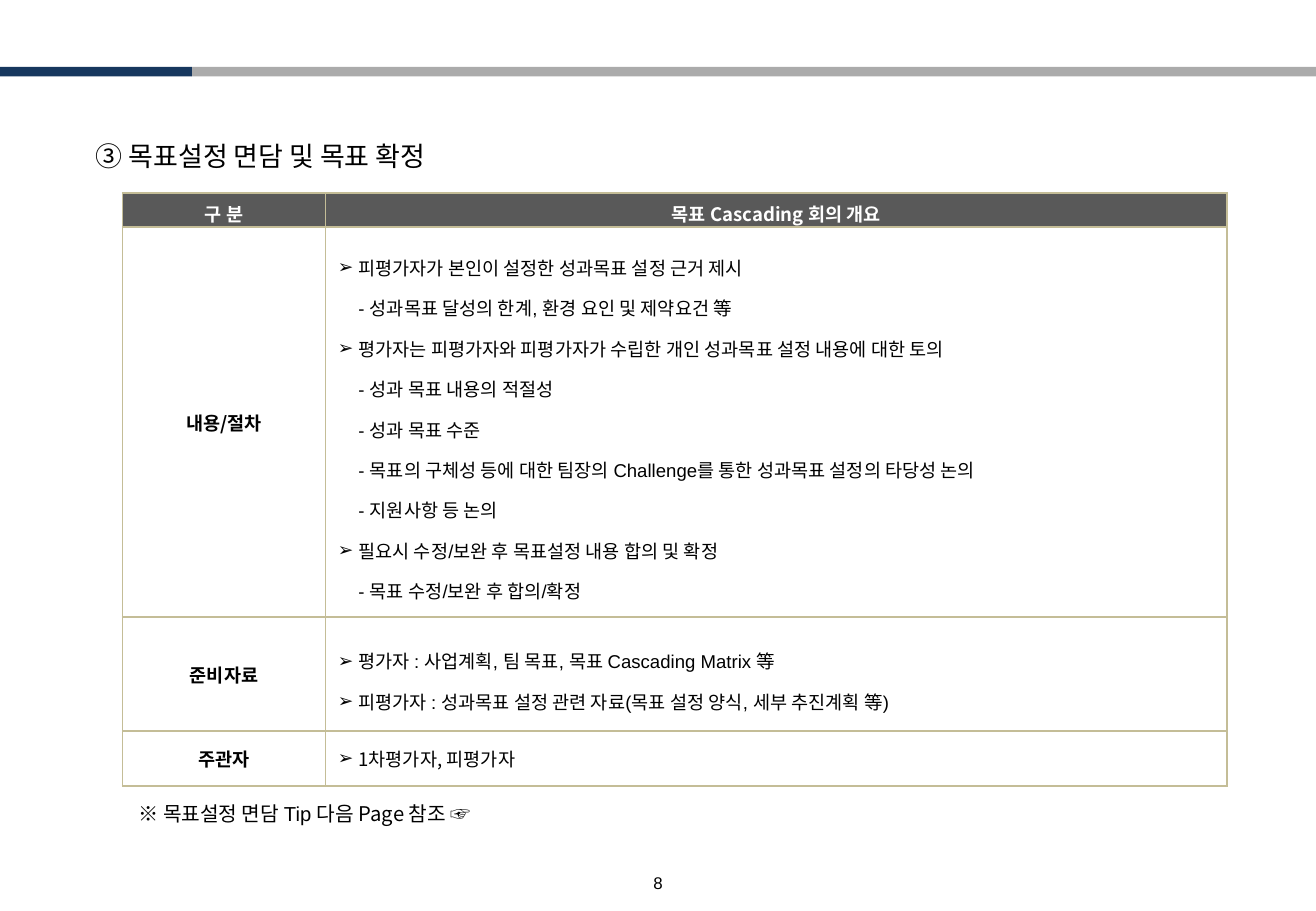
from lxml.etree import SubElement
from pptx import Presentation
from pptx.dml.color import RGBColor
from pptx.enum.shapes import MSO_SHAPE
from pptx.enum.text import MSO_ANCHOR, PP_ALIGN
from pptx.oxml import parse_xml
from pptx.oxml.ns import nsdecls, qn
from pptx.util import Inches, Pt

# Content
TITLE = "③ 목표설정 면담 및 목표 확정"
HEADERS = ("구 분", "목표 Cascading 회의 개요")
BULLET, DASH = "➢", "- "
ROWS = [
    ("내용/절차", "Arial", 1.5, [
        (BULLET, "피평가자가 본인이 설정한 성과목표 설정 근거 제시"),
        (DASH, "성과목표 달성의 한계, 환경 요인 및 제약요건 等"),
        (BULLET, "평가자는 피평가자와 피평가자가 수립한 개인 성과목표 설정 내용에 대한 토의"),
        (DASH, "성과 목표 내용의 적절성"),
        (DASH, "성과 목표 수준"),
        (DASH, "목표의 구체성 등에 대한 팀장의 Challenge를 통한 성과목표 설정의 타당성 논의"),
        (DASH, "지원사항 등 논의"),
        (BULLET, "필요시 수정/보완 후 목표설정 내용 합의 및 확정"),
        (DASH, "목표 수정/보완 후 합의/확정"),
    ]),
    ("준비자료", "Arial", 1.5, [
        (BULLET, "평가자 : 사업계획, 팀 목표, 목표 Cascading Matrix 等"),
        (BULLET, "피평가자 : 성과목표 설정 관련 자료(목표 설정 양식, 세부 추진계획 等)"),
    ]),
    ("주관자", "Noto Sans CJK KR", 1.0, [(BULLET, "1차평가자, 피평가자")]),
]
FOOTNOTE = [("※ 목표설정 면담 Tip 다음 ", "Arial"), ("Page 참조 ☞", "Noto Sans CJK KR")]
PAGE_NUMBER = "8"

# Style and layout
KOREAN = "Noto Sans CJK KR"
COLORS = {"navy": "17375E", "gray": "ABABAB", "header": "595959",
          "border": "C4BD97", "white": "FFFFFF", "black": "000000"}
COLUMN_WIDTHS = (1.67, 7.42)
ROW_HEIGHTS = (0.28, 3.21, 0.94, 0.45)
TABLE_LEFT, TABLE_TOP = 1.01, 1.59
BAR_TOP, BAR_HEIGHT = 0.55, 0.08
HANGING = 0.17


def color(name):
    return RGBColor.from_string(COLORS[name])


def add_span(para, text, size, font=KOREAN, tint="black", bold=False):
    span = para.add_run()
    span.text = text
    span.font.size, span.font.bold, span.font.name = Pt(size), bold, font
    span.font.color.rgb = color(tint)
    SubElement(span._r.get_or_add_rPr(), qn("a:ea")).set("typeface", KOREAN)


def add_text(left, top, width, height, spans, size, align=PP_ALIGN.LEFT):
    box = page.shapes.add_textbox(*map(Inches, (left, top, width, height)))
    box.text_frame.word_wrap = True
    para = box.text_frame.paragraphs[0]
    para.alignment = align
    for text, font in spans:
        add_span(para, text, size, font)
    return box.text_frame


def add_bar(left, width, tint):
    bar = page.shapes.add_shape(MSO_SHAPE.RECTANGLE, Inches(left), Inches(BAR_TOP),
                                Inches(width), Inches(BAR_HEIGHT))
    bar.shadow.inherit = False
    bar.fill.solid()
    bar.fill.fore_color.rgb = color(tint)
    bar.line.fill.background()


def style_cell(cell):
    cell.vertical_anchor = MSO_ANCHOR.MIDDLE
    cell.fill.background()
    properties = cell._tc.get_or_add_tcPr()
    for index, side in enumerate(("lnL", "lnR", "lnT", "lnB")):
        properties.insert(index, parse_xml(
            f'<a:{side} {nsdecls("a")} w="{Pt(1)}"><a:solidFill>'
            f'<a:srgbClr val="{COLORS["border"]}"/></a:solidFill></a:{side}>'))


def add_label(cell, text, tint="black"):
    para = cell.text_frame.paragraphs[0]
    para.alignment = PP_ALIGN.CENTER
    add_span(para, text, 11, tint=tint, bold=True)


def add_item(para, marker, text, font, spacing):
    para.line_spacing = spacing
    properties = para._p.get_or_add_pPr()
    properties.set("marL", str(Inches(HANGING)))
    if marker == BULLET:
        properties.set("indent", str(-Inches(HANGING)))
        SubElement(properties, qn("a:buFont")).set("typeface", "Arial")
        SubElement(properties, qn("a:buChar")).set("char", BULLET)
    else:
        properties.set("indent", "0")
        text = marker + text
    add_span(para, text, 11, font)


deck = Presentation()
deck.slide_width, deck.slide_height = Inches(10.83), Inches(7.5)
page = deck.slides.add_slide(deck.slide_layouts[6])

# Top band and title
add_bar(1.58, 9.25, "gray")
add_bar(0, 1.58, "navy")
add_text(0.69, 1.1, 9.4, 0.42, [(TITLE, KOREAN)], 16)

# Table
table = page.shapes.add_table(
    len(ROW_HEIGHTS), len(COLUMN_WIDTHS), Inches(TABLE_LEFT), Inches(TABLE_TOP),
    Inches(sum(COLUMN_WIDTHS)), Inches(sum(ROW_HEIGHTS))).table
table.first_row = table.horz_banding = False
for column, width in zip(table.columns, COLUMN_WIDTHS):
    column.width = Inches(width)
for row, height in zip(table.rows, ROW_HEIGHTS):
    row.height = Inches(height)
for cell in table.iter_cells():
    style_cell(cell)

for index, header in enumerate(HEADERS):
    cell = table.cell(0, index)
    cell.fill.solid()
    cell.fill.fore_color.rgb = color("header")
    cell.margin_top, cell.margin_bottom = Inches(0.05), Inches(0)
    add_label(cell, header, "white")

for index, (label, font, spacing, items) in enumerate(ROWS, start=1):
    add_label(table.cell(index, 0), label)
    frame = table.cell(index, 1).text_frame
    for number, (marker, text) in enumerate(items):
        para = frame.add_paragraph() if number else frame.paragraphs[0]
        add_item(para, marker, text, font, spacing)

# Footnote and page number
add_text(1.04, 6.55, 9.06, 0.34, FOOTNOTE, 12)
number_frame = add_text(4.25, 7.14, 2.33, 0.21, [(PAGE_NUMBER, "Arial")], 10, PP_ALIGN.CENTER)
number_frame.vertical_anchor = MSO_ANCHOR.BOTTOM
number_frame.margin_bottom = 0
number_frame.paragraphs[0].line_spacing = 0.7

deck.save("out.pptx")
